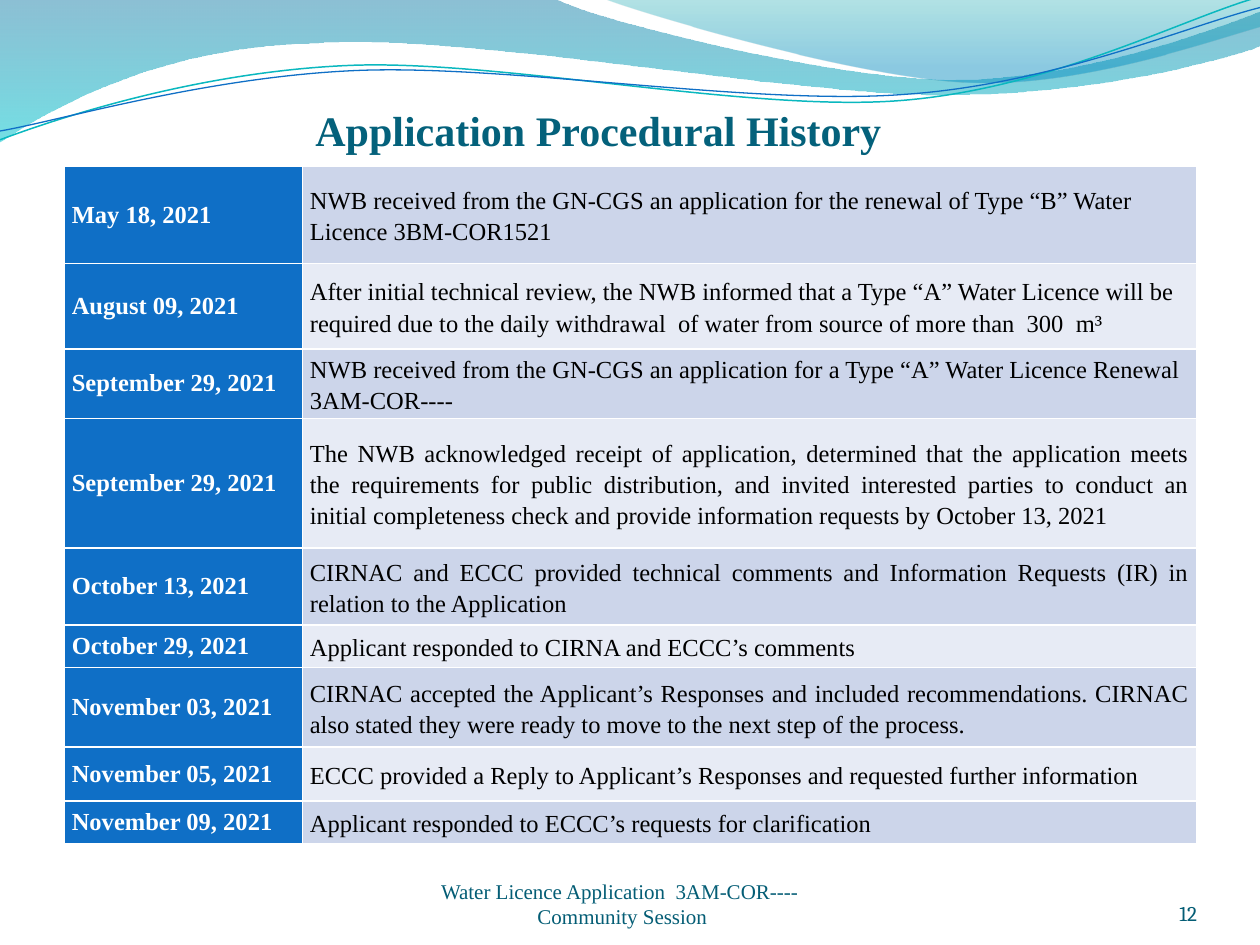
from dataclasses import dataclass

from lxml import etree
from pptx import Presentation
from pptx import util as u
from pptx.dml.color import RGBColor
from pptx.enum import text
from pptx.oxml.ns import qn


@dataclass(frozen=True)
class Theme:
    """Colours, fonts and type sizes of the slide."""
    serif: str = "Times New Roman"
    number_font: str = "Cambria"
    title: str = "04617B"
    footer: str = "045D75"
    blue: str = "0F6FC6"
    teal: str = "0AB8BF"
    white: str = "FFFFFF"
    black: str = "000000"
    bands: tuple = ("CCD5EA", "E7EBF5")
    back_wave: tuple = ((0, "0074A1", 45), (1, "00C6CF", 55))
    front_wave: tuple = ((0, "00A1A9", 30), (0.8, "008BBF", 45))
    title_size: int = 24
    table_size: int = 14
    footer_size: int = 12


THEME = Theme()
LEFT, JUSTIFY = text.PP_ALIGN.LEFT, text.PP_ALIGN.JUSTIFY
HISTORY = [
    ("May 18, 2021", 0.77, LEFT,
     "NWB received from the GN-CGS an application for the renewal of Type “B” Water Licence 3BM-COR1521"),
    ("August 09, 2021", 0.68, LEFT,
     "After initial technical review, the NWB informed that a Type “A” Water Licence will be required "
     "due to the daily withdrawal  of water from source of more than  300  m³"),
    ("September 29, 2021", 0.55, LEFT,
     "NWB received from the GN-CGS an application for a Type “A” Water Licence Renewal 3AM-COR----"),
    ("September 29, 2021", 1.03, JUSTIFY,
     "The NWB acknowledged receipt of application, determined that the application meets the requirements "
     "for public distribution, and invited interested parties to conduct an initial completeness check "
     "and provide information requests by October 13, 2021"),
    ("October 13, 2021", 0.61, JUSTIFY,
     "CIRNAC and ECCC provided technical comments and Information Requests (IR) in relation to the Application "),
    ("October 29, 2021", 0.34, JUSTIFY, "Applicant responded to CIRNA and ECCC’s comments"),
    ("November 03, 2021", 0.63, JUSTIFY,
     "CIRNAC accepted the Applicant’s Responses and included recommendations. "
     "CIRNAC also stated they were ready to move to the next step of the process."),
    ("November 05, 2021", 0.43, JUSTIFY,
     "ECCC provided a Reply to Applicant’s Responses and requested further information"),
    ("November 09, 2021", 0.34, JUSTIFY, "Applicant responded to ECCC’s requests for clarification"),
]

BACK_WAVE = [(0, 0), (4.4, -0.01), (4.76, 0.17, 6.64, 0.63, 7.58, 0.63),
             (8.53, 0.63, 9.58, 0.26, 10, 0.09), (10.01, 0.36),
             (9.83, 0.44, 8.7, 0.76, 7.46, 0.75), (6.22, 0.75, 3.82, 0.28, 2.57, 0.34),
             (1.29, 0.36, 0.46, 0.83, -0.01, 1.13), (0, 0)]
FRONT_WAVE = [(4.79, -0.01), (5.09, 0.11, 6.82, 0.62, 7.69, 0.65),
              (8.56, 0.69, 9.61, 0.32, 10, 0.21), (10, 0), (4.79, -0.01)]
TEAL_LINE = [(0, 1.11), (0.48, 0.93, 1.58, 0.57, 2.77, 0.52),
             (3.95, 0.47, 5.93, 0.89, 7.13, 0.8), (8.33, 0.71, 9.38, 0.15, 9.98, -0.02)]
BLUE_LINE = [(0, 1.04), (0.47, 0.96, 1.64, 0.61, 2.83, 0.56),
             (4.03, 0.51, 5.97, 0.84, 7.17, 0.75), (8.36, 0.67, 9.41, 0.21, 10, 0.06)]


def rgb(value):
    """Turn a hex string into a colour."""
    return RGBColor.from_string(value)


def add_outline(slide, left, top, steps, close):
    """Draw an outline whose six-number steps are cubic curves."""
    nodes = [[(u.Inches(left + x), u.Inches(top + y)) for x, y in zip(step[::2], step[1::2])]
             for step in steps]
    builder = slide.shapes.build_freeform(*nodes[0][-1])
    builder.add_line_segments([node[-1] for node in nodes[1:]], close=close)
    outline = builder.convert_to_shape()
    outline.shadow.inherit = False
    for segment, points in zip(list(outline.element.iter(qn("a:lnTo"))), nodes[1:]):
        if len(points) == 3:
            curve = etree.Element(qn("a:cubicBezTo"))
            for x, y in points:
                etree.SubElement(curve, qn("a:pt"), x=str(x - outline.left), y=str(y - outline.top))
            segment.getparent().replace(segment, curve)
    return outline


def add_wave(slide, left, top, steps, stops):
    """Draw a wave with a translucent gradient running downwards."""
    wave = add_outline(slide, left, top, steps, True)
    wave.line.fill.background()
    wave.fill.gradient()
    wave.fill.gradient_angle = 270
    for stop, (position, color, _) in zip(wave.fill.gradient_stops, stops):
        stop.position = position
        stop.color.rgb = rgb(color)
    for tint, (_, _, opacity) in zip(wave.element.spPr.iter(qn("a:srgbClr")), stops):
        etree.SubElement(tint, qn("a:alpha"), val=str(opacity * 1000))


def add_banner(slide, left, top):
    """Draw the waves and the two thin lines along the top."""
    add_wave(slide, left, top, BACK_WAVE, THEME.back_wave)
    add_wave(slide, left, top, FRONT_WAVE, THEME.front_wave)
    for steps, color, width in ((TEAL_LINE, THEME.teal, 0.85), (BLUE_LINE, THEME.blue, 0.75)):
        ripple = add_outline(slide, left, top, steps, False)
        ripple.fill.background()
        ripple.line.color.rgb = rgb(color)
        ripple.line.width = u.Pt(width)


def style(paragraph, size, color, align, font=THEME.serif, bold=False):
    """Set the alignment and font of a paragraph."""
    paragraph.alignment = align
    paragraph.font.name = font
    paragraph.font.size = u.Pt(size)
    paragraph.font.bold = bold
    paragraph.font.color.rgb = rgb(color)


def add_label(slide, left, top, width, height, lines, size, color, align, **font):
    """Place bottom-anchored lines of text in a box."""
    frame = slide.shapes.add_textbox(*map(u.Inches, (left, top, width, height))).text_frame
    frame.word_wrap = True
    frame.vertical_anchor = text.MSO_ANCHOR.BOTTOM
    frame.margin_left = frame.margin_right = frame.margin_top = frame.margin_bottom = 0
    frame.text = "\n".join(lines)
    for paragraph in frame.paragraphs:
        style(paragraph, size, color, align, **font)


def fill_cell(cell, words, fill, color, align, bold=False):
    """Write one table cell with its fill and white borders."""
    cell.margin_left = cell.margin_right = u.Inches(0.06)
    cell.margin_top = cell.margin_bottom = 0
    cell.vertical_anchor = text.MSO_ANCHOR.MIDDLE
    cell.text = words
    style(cell.text_frame.paragraphs[0], THEME.table_size, color, align, bold=bold)
    properties = cell._tc.get_or_add_tcPr()
    for side in ("a:lnL", "a:lnR", "a:lnT", "a:lnB"):
        border = etree.SubElement(properties, qn(side), w=str(u.Pt(1)))
        solid = etree.SubElement(border, qn("a:solidFill"))
        etree.SubElement(solid, qn("a:srgbClr"), val=THEME.white)
    cell.fill.solid()
    cell.fill.fore_color.rgb = rgb(fill)


def add_history(slide, left, top, width, date_width):
    """Place the table of dates and events."""
    height = sum(row[1] for row in HISTORY)
    table = slide.shapes.add_table(len(HISTORY), 2, *map(u.Inches, (left, top, width, height))).table
    table.first_row = table.horz_banding = False
    table.columns[0].width = u.Inches(date_width)
    table.columns[1].width = u.Inches(width - date_width)
    for i, (date, row_height, align, event) in enumerate(HISTORY):
        table.rows[i].height = u.Inches(row_height)
        fill_cell(table.cell(i, 0), date, THEME.blue, THEME.white, LEFT, bold=True)
        fill_cell(table.cell(i, 1), event, THEME.bands[i % 2], THEME.black, align)
        table.cell(i, 1).text_frame.paragraphs[0].line_spacing = 1.15


def main():
    """Build and save the slide."""
    deck = Presentation()
    deck.slide_width, deck.slide_height = u.Inches(10), u.Inches(7.5)
    slide = deck.slides.add_slide(deck.slide_layouts[6])
    add_banner(slide, 0, 0)
    add_label(slide, 0, 0.36, 9.5, 0.87, ["Application Procedural History"],
              THEME.title_size, THEME.title, text.PP_ALIGN.CENTER, bold=True)
    add_label(slide, 8.67, 6.95, 0.83, 0.4, ["12"],
              THEME.footer_size, THEME.footer, text.PP_ALIGN.RIGHT, font=THEME.number_font)
    add_history(slide, 0.51, 1.32, 8.99, 1.89)
    add_label(slide, 2.56, 6.9, 4.76, 0.47, ["Water Licence Application  3AM-COR---- ", "Community Session"],
              THEME.footer_size, THEME.footer, text.PP_ALIGN.CENTER)
    deck.save("out.pptx")


if __name__ == "__main__":
    main()
